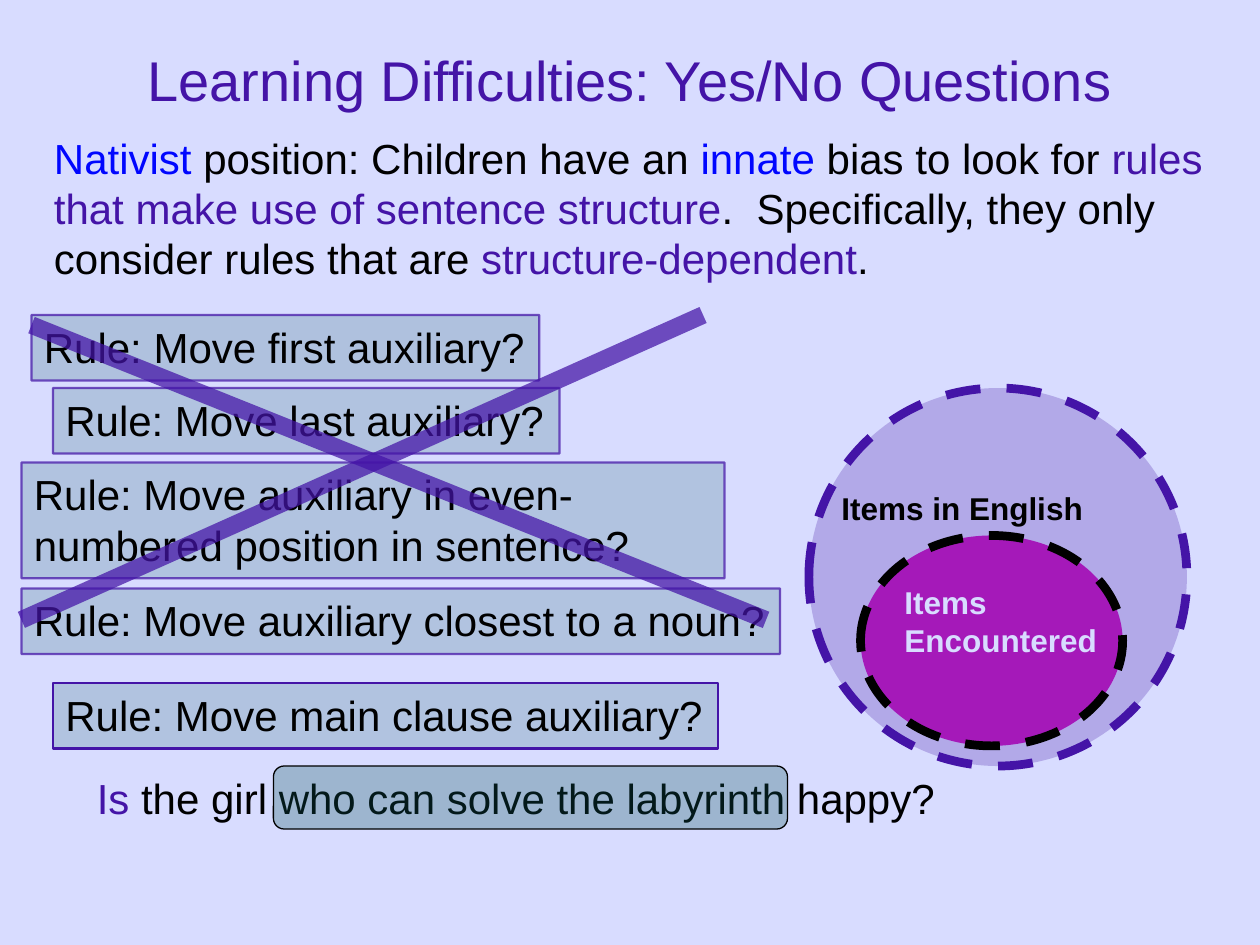
from dataclasses import dataclass

from pptx import Presentation
from pptx.dml.color import RGBColor
from pptx.enum.dml import MSO_LINE_DASH_STYLE as Dash
from pptx.enum.shapes import MSO_CONNECTOR as Connector
from pptx.enum.shapes import MSO_SHAPE as Preset
from pptx.enum.text import MSO_ANCHOR as Anchor
from pptx.enum.text import MSO_AUTO_SIZE as AutoSize
from pptx.enum.text import PP_ALIGN as Align
from pptx.oxml.ns import qn
from pptx.oxml.xmlchemy import OxmlElement
from pptx.util import Inches, Pt

LAVENDER = "D8DCFF"
PURPLE = "4414A7"
MAGENTA = "A519B9"
TEAL = "0D585D"
BLUE = "0006FF"
BLACK = "000000"
FONT = "Arial"
FADED = 72


@dataclass(frozen=True)
class Area:
    left: float
    top: float
    width: float
    height: float

    def lengths(self) -> tuple:
        return tuple(Inches(n) for n in (self.left, self.top, self.width, self.height))


@dataclass(frozen=True)
class Rule:
    text: str
    area: Area
    wrap: bool = False
    opacity: int = 19
    line_opacity: int = FADED


@dataclass(frozen=True)
class Stroke:
    start: tuple[float, float]
    end: tuple[float, float]


RULES = [
    Rule("Rule: Move main clause auxiliary?", Area(0.42, 5.42, 5.28, 0.52), line_opacity=100),
    Rule("Rule: Move first auxiliary?", Area(0.25, 2.5, 4.03, 0.52), opacity=20),
    Rule("Rule: Move last auxiliary?", Area(0.42, 3.08, 4.02, 0.52)),
    Rule("Rule: Move auxiliary in even-numbered position in sentence?",
         Area(0.17, 3.67, 5.58, 0.92), wrap=True),
    Rule("Rule: Move auxiliary closest to a noun?", Area(0.17, 4.67, 6.02, 0.52)),
]
CROSS = [Stroke((5.58, 2.5), (0.17, 4.92)), Stroke((6.08, 4.92), (0.25, 2.58))]

POSITION = [
    ("Nativist", BLUE),
    (" position: Children have an ", BLACK),
    ("innate", BLUE),
    (" bias to look for ", BLACK),
    ("rules that make use of sentence structure", PURPLE),
    (".  Specifically, they only consider rules that are ", BLACK),
    ("structure-dependent", PURPLE),
    (".", BLACK),
]
QUESTION = [("Is", PURPLE), (" the girl who can solve the labyrinth happy?", BLACK)]


def paint(target, color: str) -> None:
    target.rgb = RGBColor.from_string(color)


def set_opacity(shape, query: str, percent: int) -> None:
    if percent < 100:
        for color in shape._element.spPr.xpath(query):
            alpha = OxmlElement("a:alpha")
            alpha.set("val", str(percent * 1000))
            color.append(alpha)


def style_line(shape, color: str, width: float, opacity: int = 100) -> None:
    paint(shape.line.color, color)
    shape.line.width = Pt(width)
    set_opacity(shape, "./a:ln/a:solidFill/a:srgbClr", opacity)


def write(box, spans: list[tuple[str, str]], *, size: float = 24, bold: bool = False,
          wrap: bool = True, grow: bool = True, align=Align.LEFT, anchor=Anchor.TOP) -> None:
    frame = box.text_frame
    frame.word_wrap = wrap
    frame.auto_size = AutoSize.SHAPE_TO_FIT_TEXT if grow else AutoSize.NONE
    frame.vertical_anchor = anchor
    para = frame.paragraphs[0]
    para.alignment = align
    for text, color in spans:
        span = para.add_run()
        span.text = text
        span.font.name = FONT
        span.font.size = Pt(size)
        span.font.bold = bold
        paint(span.font.color, color)


def add_text(page, area: Area, spans: list[tuple[str, str]], **style) -> None:
    write(page.shapes.add_textbox(*area.lengths()), spans, **style)


def add_box(page, preset, area: Area, fill: str, line: str, width: float, *,
            opacity: int = 100, line_opacity: int = 100, dash=None):
    box = page.shapes.add_shape(preset, *area.lengths())
    box.shadow.inherit = False
    box.fill.solid()
    paint(box.fill.fore_color, fill)
    set_opacity(box, "./a:solidFill/a:srgbClr", opacity)
    style_line(box, line, width, line_opacity)
    if dash is not None:
        box.line.dash_style = dash
    return box


def add_rule(page, rule: Rule) -> None:
    box = add_box(page, Preset.RECTANGLE, rule.area, TEAL, PURPLE, 1.25,
                  opacity=rule.opacity, line_opacity=rule.line_opacity)
    write(box, [(rule.text, BLACK)], wrap=rule.wrap)


def add_stroke(page, stroke: Stroke) -> None:
    ends = [Inches(n) for n in (*stroke.start, *stroke.end)]
    line = page.shapes.add_connector(Connector.STRAIGHT, *ends)
    style_line(line, PURPLE, 10, FADED)
    if line._element.spPr.find(qn("a:effectLst")) is None:
        line._element.spPr.append(OxmlElement("a:effectLst"))


def main() -> None:
    deck = Presentation()
    deck.slide_width, deck.slide_height = Inches(10), Inches(7.5)
    page = deck.slides.add_slide(deck.slide_layouts[6])
    page.background.fill.solid()
    paint(page.background.fill.fore_color, LAVENDER)

    add_text(page, Area(0, 0, 10, 1.25), [("Learning Difficulties: Yes/No Questions", PURPLE)],
             size=32, grow=False, align=Align.CENTER, anchor=Anchor.MIDDLE)
    main_rule, *rejected_rules = RULES
    add_rule(page, main_rule)
    add_text(page, Area(0.67, 6.08, 9.33, 0.5), QUESTION)
    add_text(page, Area(0.33, 1, 9.5, 1.3), POSITION)
    clause = add_box(page, Preset.ROUNDED_RECTANGLE, Area(2.17, 6.08, 4.08, 0.5),
                     TEAL, BLACK, 0.75, opacity=29)
    clause.adjustments[0] = 0.17

    add_box(page, Preset.OVAL, Area(6.42, 3.08, 3, 3), PURPLE, PURPLE, 5,
            opacity=25, dash=Dash.DASH)
    add_box(page, Preset.OVAL, Area(6.83, 4.25, 2.08, 1.67), MAGENTA, BLACK, 5, dash=Dash.DASH)
    add_text(page, Area(7.08, 4.58, 1.75, 0.7), [("Items Encountered", LAVENDER)],
             size=18, bold=True)
    add_text(page, Area(6.58, 3.83, 2.12, 0.4), [("Items in English", BLACK)],
             size=18, bold=True, wrap=False)

    for rule in rejected_rules:
        add_rule(page, rule)
    for stroke in CROSS:
        add_stroke(page, stroke)
    deck.save("out.pptx")


if __name__ == "__main__":
    main()
